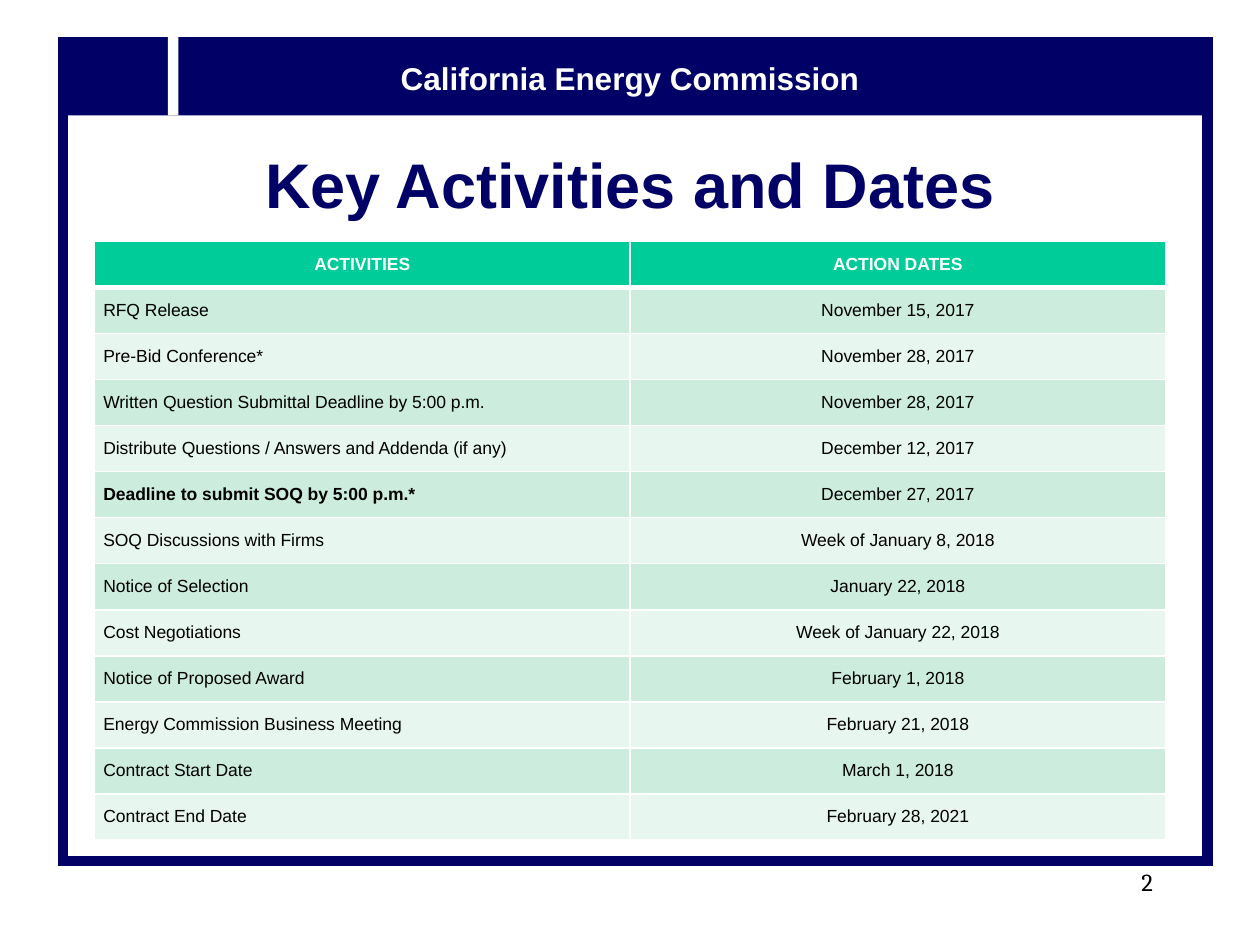
"""Build the slide of key activities and dates for a request for qualifications."""
from pptx import Presentation
from pptx.dml.color import RGBColor as RGB
from pptx.enum.shapes import MSO_SHAPE as Shape
from pptx.enum.text import MSO_ANCHOR as Anchor, PP_ALIGN as Align
from pptx.oxml.ns import qn
from pptx.util import Inches, Pt
from lxml.etree import SubElement as Sub

INK = {"navy": "000066", "white": "FFFFFF", "black": "000000",
       "head": "00CC99", "odd": "CCECDE", "even": "E7F6EF"}
ROWS = [
    ("ACTIVITIES", "ACTION DATES"),
    ("RFQ Release", "November 15, 2017"),
    ("Pre-Bid Conference*", "November 28, 2017"),
    ("Written Question Submittal Deadline by 5:00 p.m.", "November 28, 2017"),
    ("Distribute Questions / Answers and Addenda (if any)", "December 12, 2017"),
    ("Deadline to submit SOQ by 5:00 p.m.*", "December 27, 2017"),
    ("SOQ Discussions with Firms", "Week of January 8, 2018"),
    ("Notice of Selection", "January 22, 2018"),
    ("Cost Negotiations", "Week of January 22, 2018"),
    ("Notice of Proposed Award", "February 1, 2018"),
    ("Energy Commission Business Meeting", "February 21, 2018"),
    ("Contract Start Date", "March 1, 2018"),
    ("Contract End Date", "February 28, 2021"),
]

deck = Presentation()
deck.slide_width, deck.slide_height = Inches(10), Inches(7.5)
slide = deck.slides.add_slide(deck.slide_layouts[6])
shapes = slide.shapes
UNIT = deck.slide_width / 120


def grid(*cells):
    return [round(cell * UNIT) for cell in cells]


def write(frame, text, size=10, color="black", bold=False, font="Arial",
          align=Align.CENTER, after=0):
    frame.word_wrap = True
    para = frame.paragraphs[0]
    para.alignment, para.space_after = align, Pt(after)
    run = para.add_run()
    run.text = text
    run.font.name, run.font.size, run.font.bold = font, Pt(size), bold
    run.font.color.rgb = RGB.from_string(INK[color])


frame = shapes.add_shape(Shape.RECTANGLE, *grid(6, 4, 109, 78))
frame.shadow.inherit = False
frame.fill.background()
frame.line.color.rgb = RGB.from_string(INK["navy"])
frame.line.width = Pt(6)
Sub(frame.line._get_or_add_ln(), qn("a:miter"), lim="800000")

for place, color in (((6, 4, 109, 7), "navy"), ((16, 3, 1, 8), "white")):
    bar = shapes.add_shape(Shape.RECTANGLE, *grid(*place))
    bar.shadow.inherit = False
    bar.fill.solid()
    bar.fill.fore_color.rgb = RGB.from_string(INK[color])
    bar.line.fill.background()

label = shapes.add_textbox(*grid(6, 5, 108, 5))
write(label.text_frame, "California Energy Commission", size=18, color="white", bold=True)

title = shapes.add_textbox(*grid(9, 12, 102, 11))
title.text_frame.vertical_anchor = Anchor.MIDDLE
write(title.text_frame, "Key Activities and Dates", size=36, color="navy", bold=True)

table = shapes.add_table(len(ROWS), 2, *grid(9, 23, 102, 57)).table
for r, row in enumerate(ROWS):
    band = "head" if r == 0 else "odd" if r % 2 else "even"
    for c, text in enumerate(row):
        cell = table.cell(r, c)
        cell.vertical_anchor = Anchor.MIDDLE
        cell.margin_left = cell.margin_right = Inches(0.07)
        cell.margin_top = cell.margin_bottom = 0
        write(cell.text_frame, text, color="black" if r else "white",
              bold=r == 0 or text.startswith("Deadline"),
              align=Align.LEFT if r and c == 0 else Align.CENTER, after=6)
        props = cell._tc.get_or_add_tcPr()
        for side in "LRTB":
            thick = 3 if (r, side) in ((0, "B"), (1, "T")) else 1
            edge = Sub(props, qn(f"a:ln{side}"), w=str(Pt(thick)))
            Sub(Sub(edge, qn("a:solidFill")), qn("a:srgbClr"), val=INK["white"])
        cell.fill.solid()
        cell.fill.fore_color.rgb = RGB.from_string(INK[band])

page = shapes.add_textbox(*grid(86, 82, 25, 6))
write(page.text_frame, "2", size=14, font="Cambria", align=Align.RIGHT)

deck.save("out.pptx")
